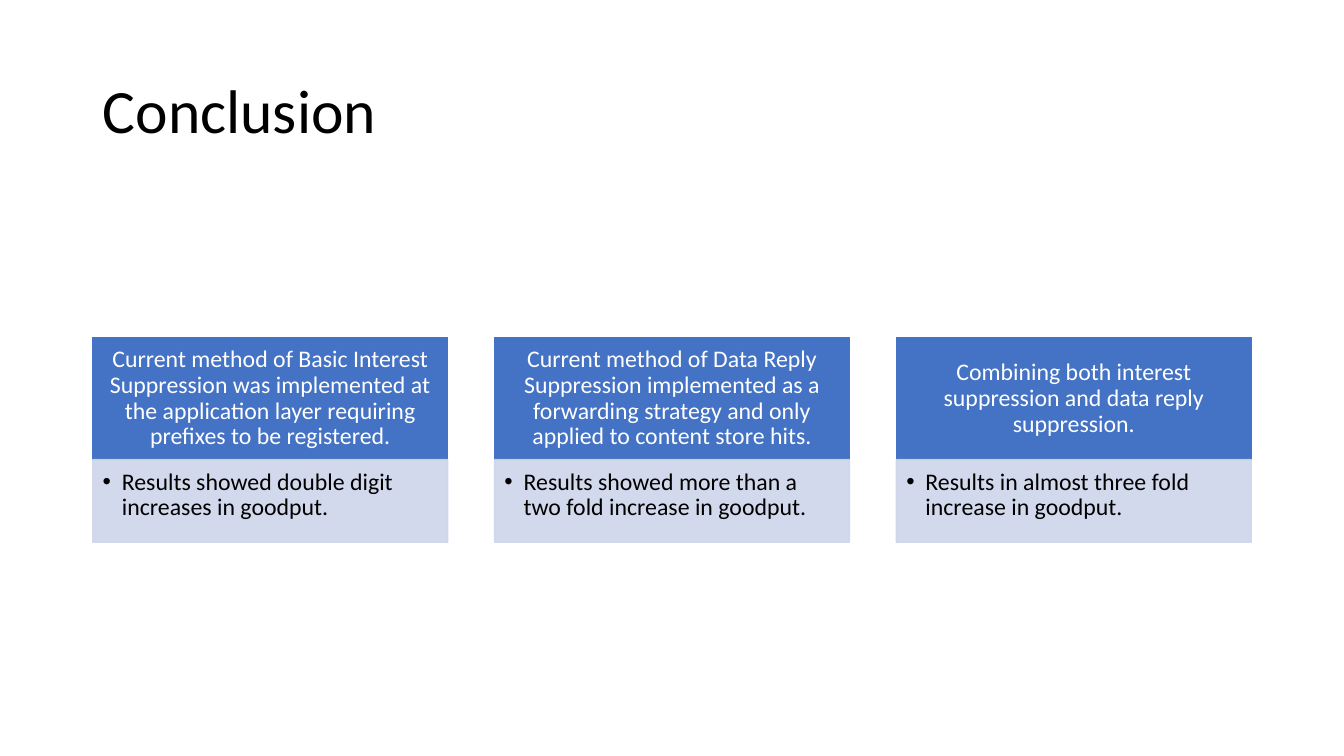
from lxml.etree import SubElement as Sub
from pptx import Presentation
from pptx.dml.color import RGBColor
from pptx.enum.shapes import MSO_SHAPE as Shape
from pptx.enum.text import MSO_ANCHOR as Anchor, PP_ALIGN as Align
from pptx.oxml.ns import qn
from pptx.util import Inches, Pt

BLUE = RGBColor(0x44, 0x72, 0xC4)
PALE = RGBColor(0xCF, 0xD5, 0xEA)
BLACK = RGBColor(0, 0, 0)
WHITE = RGBColor(0xFF, 0xFF, 0xFF)

LEFT, WIDE, COLS = 0.92, 11.49, 3
CARD = 3.52
STEP = (WIDE - CARD) / (COLS - 1)
TOP, HEAD, BODY = 3.35, 1.21, 0.82


def write(shape, text, size=17, color=BLACK, align=Align.LEFT,
          anchor=Anchor.TOP, inset=(0.1, 0.05, 0.1, 0.05), bullet=False):
    frame = shape.text_frame
    frame.word_wrap = True
    frame.vertical_anchor = anchor
    (frame.margin_left, frame.margin_top,
     frame.margin_right, frame.margin_bottom) = map(Inches, inset)
    para = frame.paragraphs[0]
    para.alignment = align
    para.line_spacing = 0.9
    run = para.add_run()
    run.text = text
    run.font.name = "Calibri"
    run.font.size = Pt(size)
    run.font.color.rgb = color
    if bullet:
        para.level = 1
        props = para._p.get_or_add_pPr()
        props.set("marL", str(Inches(0.19)))
        props.set("indent", str(Inches(-0.19)))
        Sub(props, qn("a:buFont"), typeface="Arial")
        Sub(props, qn("a:buChar"), char="•")


def box(group, x, y, height, color, alpha=100):
    shape = group.shapes.add_shape(
        Shape.RECTANGLE, Inches(x), Inches(y), Inches(CARD), Inches(height))
    shape.shadow.inherit = False
    shape.fill.solid()
    shape.fill.fore_color.rgb = color
    shape.line.color.rgb = color
    shape.line.width = Pt(1)
    if alpha < 100:
        for tint in shape._element.spPr.iter(qn("a:srgbClr")):
            Sub(tint, qn("a:alpha"), val=str(alpha * 1000))
    return shape


deck = Presentation()
deck.slide_width = Inches(13.33)
deck.slide_height = Inches(7.5)
slide = deck.slides.add_slide(deck.slide_layouts[5])

title = slide.shapes.title
title.left, title.top = Inches(LEFT), Inches(0.4)
title.width, title.height = Inches(11.5), Inches(1.45)
write(title, "Conclusion", size=44, anchor=Anchor.MIDDLE)

cards = [
    ("Current method of Basic Interest Suppression was implemented at "
     "the application layer requiring prefixes to be registered.",
     "Results showed double digit increases in goodput."),
    ("Current method of Data Reply Suppression implemented as a "
     "forwarding strategy and only applied to content store hits.",
     "Results showed more than a two fold increase in goodput."),
    ("Combining both interest suppression and data reply suppression.",
     "Results in almost three fold increase in goodput."),
]

group = slide.shapes.add_group_shape()
for col, (method, result) in enumerate(cards):
    x = LEFT + col * STEP
    write(box(group, x, TOP, HEAD, BLUE), method, color=WHITE,
          align=Align.CENTER, anchor=Anchor.MIDDLE,
          inset=(0.13, 0.08, 0.13, 0.08))
    write(box(group, x, TOP + HEAD, BODY, PALE, alpha=90), result,
          inset=(0.1, 0.1, 0.13, 0.15), bullet=True)

deck.save("out.pptx")
